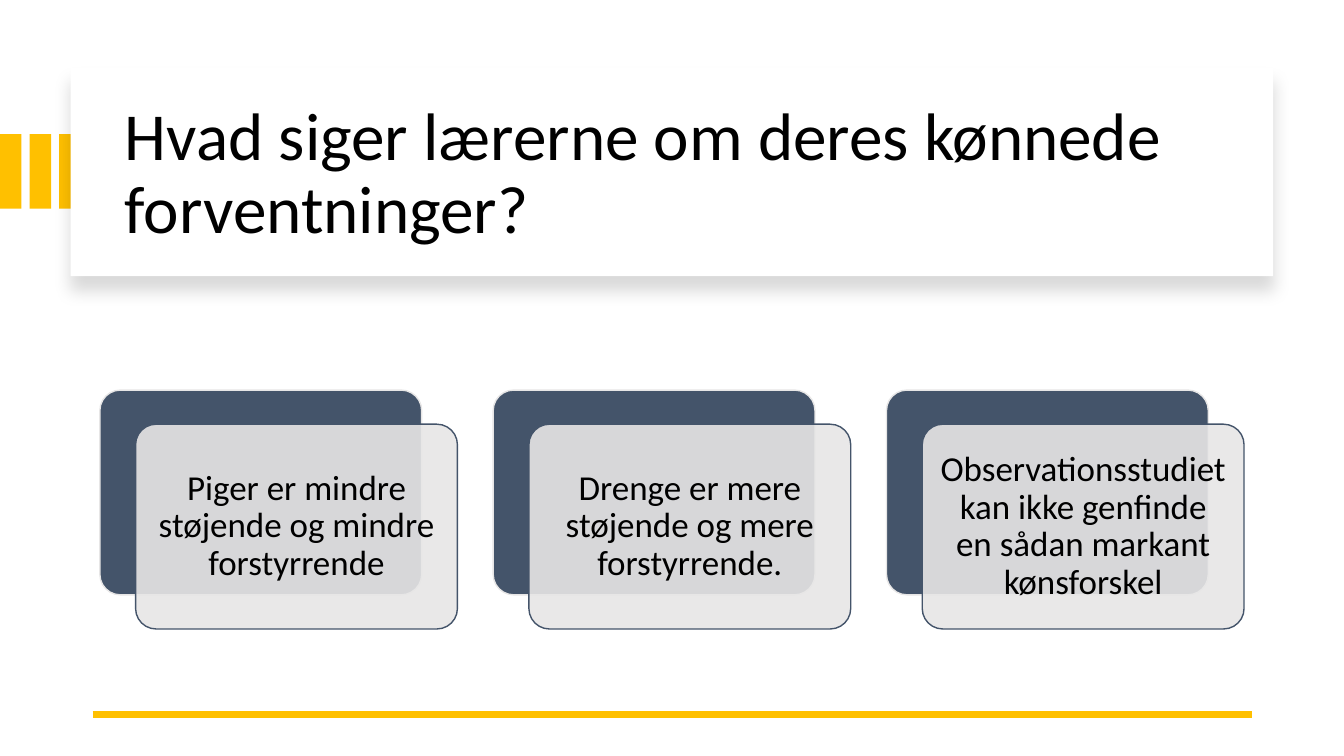
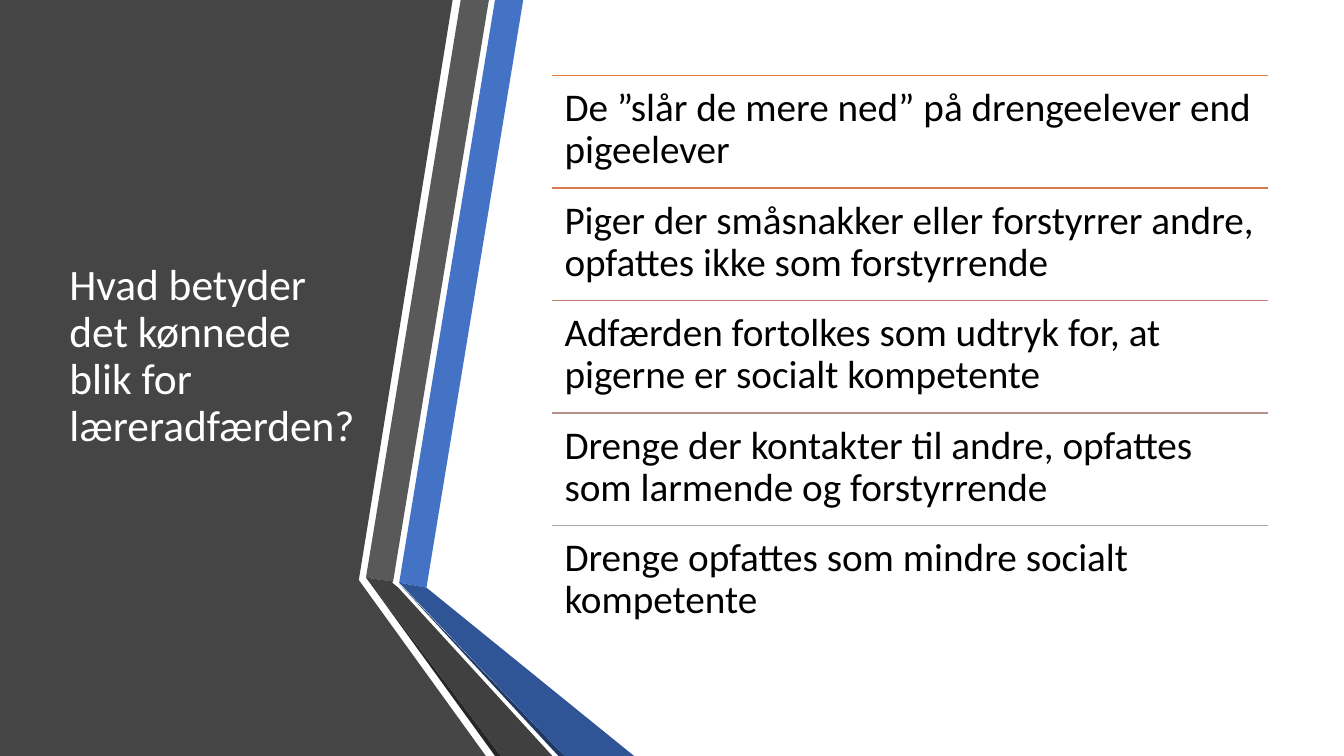
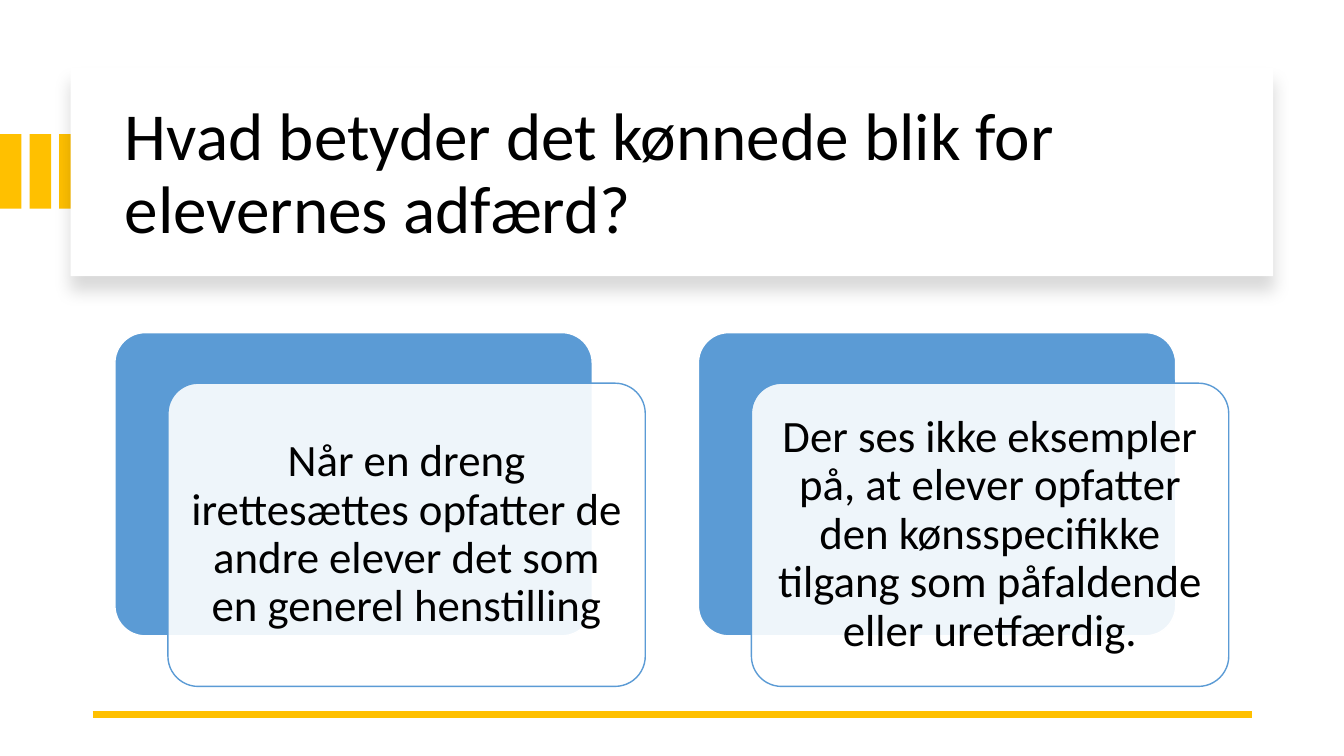
import dataclasses

import lxml.etree
import pptx
import pptx.dml.color
import pptx.enum.shapes
import pptx.enum.text
import pptx.oxml.ns
import pptx.util

RGBColor = pptx.dml.color.RGBColor
Preset = pptx.enum.shapes.MSO_SHAPE
Align = pptx.enum.text.PP_ALIGN
Anchor = pptx.enum.text.MSO_ANCHOR

FONT = "Calibri"
BLACK = RGBColor(0x00, 0x00, 0x00)
WHITE = RGBColor(0xFF, 0xFF, 0xFF)
GOLD = RGBColor(0xFF, 0xC0, 0x00)
SLATE = RGBColor(0x44, 0x54, 0x6A)
PALE_GRAY = RGBColor(0xE7, 0xE6, 0xE6)
SKY = RGBColor(0x5B, 0x9B, 0xD5)
PANEL_GRAY = RGBColor(0x45, 0x45, 0x45)
BLUE = RGBColor(0x44, 0x72, 0xC4)
DEEP_BLUE = RGBColor(0x2F, 0x55, 0x97)
NAVY = RGBColor(0x20, 0x38, 0x64)
MID_GRAY = RGBColor(0x59, 0x59, 0x59)
CHARCOAL = RGBColor(0x40, 0x40, 0x40)
INK = RGBColor(0x26, 0x26, 0x26)
RULE_COLORS = (
    RGBColor(0xED, 0x7D, 0x31),
    RGBColor(0xD8, 0x7A, 0x51),
    RGBColor(0xC4, 0x81, 0x70),
    RGBColor(0xB4, 0x90, 0x8B),
    RGBColor(0xA5, 0xA5, 0xA5),
)

RIBBONS = (
    (PANEL_GRAY, ((0, 0), (33.68, 0), (26.7, 76.73), (36.15, 100), (0, 100))),
    (BLUE, ((29.7, 77.07), (31.73, 77.73), (38.93, 0), (36.83, 0))),
    (MID_GRAY, ((36.38, 0), (34.28, 0), (27.23, 76.4), (29.25, 76.93))),
    (INK, ((27.23, 76.4), (36.83, 100), (37.28, 100))),
    (NAVY, ((29.7, 77.2), (41.55, 100), (42, 100))),
    (DEEP_BLUE, ((29.7, 77.07), (42, 100), (47.18, 100), (31.73, 77.73))),
    (CHARCOAL, ((41.1, 100), (29.63, 77.73), (29.18, 77.07), (29.25, 76.93),
                (27.23, 76.4), (37.28, 100))),
)


@dataclasses.dataclass
class Box:
    """A rectangle whose regions are given in percent of its size."""

    left: float
    top: float
    width: float
    height: float

    def point(self, across, down):
        """Return the place at the given percentages."""
        return (round(self.left + self.width * across / 100),
                round(self.top + self.height * down / 100))

    def region(self, left, top, width, height):
        """Return the box covering the given percentages."""
        return Box(*self.point(left, top), round(self.width * width / 100),
                   round(self.height * height / 100))

    def frame(self):
        """Return left, top, width and height."""
        return self.left, self.top, self.width, self.height


def add_child(parent, tag, **attributes):
    """Append a drawing element to a parent."""
    return lxml.etree.SubElement(parent, pptx.oxml.ns.qn(tag), attributes)


def paint(shape, fill, line=None):
    """Give a shape a flat fill and an optional thin outline."""
    shape.shadow.inherit = False
    shape.fill.solid()
    shape.fill.fore_color.rgb = fill
    if line is None:
        shape.line.fill.background()
    else:
        shape.line.color.rgb = line
        shape.line.width = pptx.util.Pt(1)


def add_block(slide, box, fill, line=None, preset=Preset.RECTANGLE):
    """Add a painted preset shape."""
    shape = slide.shapes.add_shape(preset, *box.frame())
    paint(shape, fill, line)
    return shape


def add_card(slide, box, fill, line):
    """Add a rounded block."""
    shape = add_block(slide, box, fill, line, Preset.ROUNDED_RECTANGLE)
    shape.adjustments[0] = 0.1
    return shape


def add_rule(slide, start, end, color, width):
    """Add a straight line without shadow."""
    rule = slide.shapes.add_connector(
        pptx.enum.shapes.MSO_CONNECTOR.STRAIGHT, *start, *end)
    rule.line.color.rgb = color
    rule.line.width = pptx.util.Pt(width)
    add_child(rule._element.spPr, "a:effectLst")


def write(shape, text, size, color=BLACK, align=Align.LEFT,
          anchor=Anchor.MIDDLE, margin=None):
    """Put one styled paragraph into a shape."""
    frame = shape.text_frame
    frame.word_wrap = True
    frame.vertical_anchor = anchor
    if margin is not None:
        frame.margin_left = frame.margin_right = pptx.util.Inches(margin)
        frame.margin_top = frame.margin_bottom = pptx.util.Inches(margin)
    frame.text = text
    paragraph = frame.paragraphs[0]
    paragraph.alignment = align
    paragraph.line_spacing = 0.9
    font = paragraph.runs[0].font
    font.name = FONT
    font.size = pptx.util.Pt(size)
    font.color.rgb = color


def add_text(slide, box, text, size, **style):
    """Add a text box with one paragraph."""
    write(slide.shapes.add_textbox(*box.frame()), text, size, **style)


def add_drop_shadow(shape):
    """Add a soft shadow below a shape."""
    effects = shape._element.spPr.find(pptx.oxml.ns.qn("a:effectLst"))
    shadow = add_child(effects, "a:outerShdw", blurRad="139700",
                       dist="127000", dir="5400000", algn="t",
                       rotWithShape="0")
    color = add_child(shadow, "a:srgbClr", val=str(BLACK))
    add_child(color, "a:alpha", val="15000")


def set_opacity(shape, percent):
    """Make the solid fill of a shape partly transparent."""
    fill = shape._element.spPr.find(pptx.oxml.ns.qn("a:solidFill"))
    add_child(fill[0], "a:alpha", val=str(percent * 1000))


def add_banner(slide, box, title):
    """Add the stripes, the raised title band and the bottom rule."""
    for index in range(3):
        add_block(slide, box.region(2.2 * index, 17.73, 1.6, 9.87), GOLD)
    add_drop_shadow(add_block(slide, box.region(5.25, 8.93, 89.47, 27.6), WHITE))
    add_text(slide, box.region(8.55, 11.87, 83.48, 22.67), title, 48)
    add_rule(slide, box.point(6.9, 94.53), box.point(93.15, 94.53), GOLD, 4.5)


def add_card_row(slide, box, texts, size, margin, dark, light):
    """Fill a box with equal pairs of overlapping cards."""
    step = 100 / (11 * len(texts) - 1)
    for index, text in enumerate(texts):
        left = 11 * step * index
        back = box.region(left, 0, 9 * step, 600 / 7)
        front = box.region(left + step, 100 / 7, 9 * step, 600 / 7)
        add_card(slide, back, dark, light)
        card = add_card(slide, front, light, dark)
        set_opacity(card, 90)
        write(card, text, size, align=Align.CENTER, margin=margin)


def add_ribbons(slide, box):
    """Add the side panel and its folded ribbons."""
    for color, corners in RIBBONS:
        points = [box.point(*corner) for corner in corners]
        builder = slide.shapes.build_freeform(*points[0])
        builder.add_line_segments(points[1:])
        paint(builder.convert_to_shape(), color)


def add_ruled_list(slide, box, texts):
    """Stack texts in equal rows, each under a coloured rule."""
    height = 100 / len(texts)
    for index, (text, color) in enumerate(zip(texts, RULE_COLORS)):
        row = box.region(0, height * index, 100, height)
        add_rule(slide, row.point(0, 0), row.point(100, 0), color, 1)
        add_text(slide, row, text, 28, anchor=Anchor.TOP, margin=0.12)


def build_expectations(slide, page):
    """Build the slide on what the teachers say."""
    add_banner(slide, page, "Hvad siger lærerne om deres kønnede forventninger?")
    texts = (
        "Piger er mindre støjende og mindre forstyrrende",
        "Drenge er mere støjende og mere forstyrrende.",
        "Observationsstudiet kan ikke genfinde en sådan markant kønsforskel",
    )
    add_card_row(slide, page.region(7.43, 51.6, 85.13, 31.6), texts, 25, 0.1,
                 SLATE, PALE_GRAY)


def build_teachers(slide, page):
    """Build the slide on the behaviour of teachers."""
    add_ribbons(slide, page)
    add_text(slide, page.region(4.43, 10, 22.8, 74.4),
             "Hvad betyder det kønnede blik for læreradfærden?", 31,
             color=WHITE)
    texts = (
        "De ”slår de mere ned” på drengeelever end pigeelever",
        "Piger der småsnakker eller forstyrrer andre, opfattes ikke som "
        "forstyrrende",
        "Adfærden fortolkes som udtryk for, at pigerne er socialt kompetente",
        "Drenge der kontakter til andre, opfattes som larmende og forstyrrende",
        "Drenge opfattes som mindre socialt kompetente",
    )
    add_ruled_list(slide, page.region(41.1, 10, 53.25, 74.4), texts)


def build_pupils(slide, page):
    """Build the slide on the behaviour of pupils."""
    add_banner(slide, page, "Hvad betyder det kønnede blik for elevernes adfærd?")
    texts = (
        "Når en dreng irettesættes opfatter de andre elever det som en "
        "generel henstilling",
        "Der ses ikke eksempler på, at elever opfatter den kønsspecifikke "
        "tilgang som påfaldende eller uretfærdig.",
    )
    add_card_row(slide, page.region(8.55, 44, 82.88, 46.8), texts, 32, 0.13,
                 SKY, WHITE)


def main():
    """Build and save the presentation."""
    presentation = pptx.Presentation()
    presentation.slide_width = pptx.util.Inches(13.33)
    presentation.slide_height = pptx.util.Inches(7.5)
    page = Box(0, 0, presentation.slide_width, presentation.slide_height)
    for build in (build_expectations, build_teachers, build_pupils):
        build(presentation.slides.add_slide(presentation.slide_layouts[6]), page)
    presentation.save("out.pptx")


if __name__ == "__main__":
    main()
